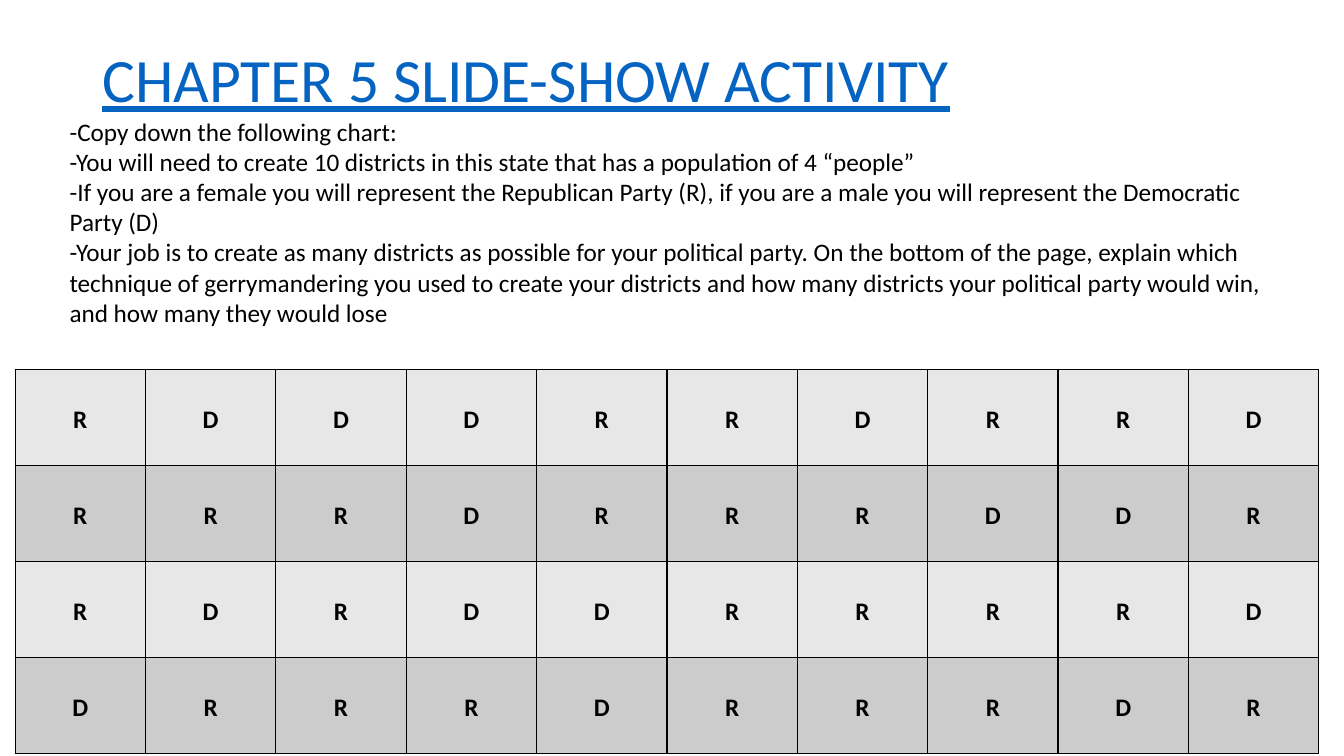
import pptx
import pptx.dml.color
import pptx.enum.text
import pptx.oxml
import pptx.oxml.ns
import pptx.util

RGBColor = pptx.dml.color.RGBColor
Align = pptx.enum.text.PP_ALIGN
Anchor = pptx.enum.text.MSO_ANCHOR

BLACK = RGBColor(0x00, 0x00, 0x00)
BLUE = RGBColor(0x05, 0x63, 0xC1)
LIGHT = RGBColor(0xE7, 0xE7, 0xE7)
DARK = RGBColor(0xCC, 0xCC, 0xCC)
FONT = "Calibri"

GRID_COLS, GRID_ROWS = 160, 90
UNIT = pptx.util.Inches(7.5) / GRID_ROWS

TITLE = "CHAPTER 5 SLIDE-SHOW ACTIVITY"
INSTRUCTIONS = [
    "-Copy down the following chart:",
    "-You will need to create 10 districts in this state that has a population of 4 “people”",
    "-If you are a female you will represent the Republican Party (R), if you are a male "
    "you will represent the Democratic Party (D)",
    "-Your job is to create as many districts as possible for your political party. On the "
    "bottom of the page, explain which technique of gerrymandering you used to create your "
    "districts and how many districts your political party would win, and how many they "
    "would lose",
]
VOTERS = ["RDDDRRDRRD", "RRRDRRRDDR", "RDRDDRRRRD", "DRRRDRRRDR"]


def grid(*cells):
    """Turn grid columns and rows into slide lengths."""
    return [round(n * UNIT) for n in cells]


def write(tf, lines, size=18, color=BLACK, bold=False, underline=False,
          align=Align.LEFT, spacing=1.0):
    """Write one formatted paragraph per line into a text frame."""
    tf.word_wrap = True
    for i, line in enumerate(lines):
        p = tf.paragraphs[0] if i == 0 else tf.add_paragraph()
        p.alignment = align
        p.line_spacing = spacing
        r = p.add_run()
        r.text = line
        r.font.name = FONT
        r.font.size = pptx.util.Pt(size)
        r.font.bold = bold
        r.font.underline = underline
        r.font.color.rgb = color


def add_text(slide, box, lines, anchor=Anchor.TOP, **style):
    """Place a text box in the given grid box."""
    tf = slide.shapes.add_textbox(*grid(*box)).text_frame
    tf.vertical_anchor = anchor
    write(tf, lines, **style)


def set_borders(cell):
    """Draw a thin black line on every side of a cell."""
    tcPr = cell._tc.get_or_add_tcPr()
    for i, side in enumerate(("lnL", "lnR", "lnT", "lnB")):
        tcPr.insert(i, pptx.oxml.parse_xml(
            f'<a:{side} {pptx.oxml.ns.nsdecls("a")} w="{pptx.util.Pt(1)}">'
            f'<a:solidFill><a:srgbClr val="{BLACK}"/></a:solidFill></a:{side}>'))


def add_voter_table(slide, box):
    """Fill the given grid box with the banded table of voters."""
    x, y, w, h = grid(*box)
    rows, cols = len(VOTERS), len(VOTERS[0])
    table = slide.shapes.add_table(rows, cols, x, y, w, h).table
    table.first_row = False
    table.horz_banding = False
    for column in table.columns:
        column.width = w // cols
    for i, voters in enumerate(VOTERS):
        table.rows[i].height = h // rows
        for j, voter in enumerate(voters):
            cell = table.cell(i, j)
            cell.fill.solid()
            cell.fill.fore_color.rgb = DARK if i % 2 else LIGHT
            cell.margin_top = pptx.util.Inches(0.35)
            write(cell.text_frame, [voter], bold=True, align=Align.CENTER)
            set_borders(cell)


def main():
    """Build and save the activity slide."""
    prs = pptx.Presentation()
    prs.slide_width, prs.slide_height = grid(GRID_COLS, GRID_ROWS)
    slide = prs.slides.add_slide(prs.slide_layouts[6])
    add_text(slide, (11, 4.8, 138, 10.1), [TITLE], anchor=Anchor.MIDDLE,
             size=44, color=BLUE, underline=True, spacing=0.9)
    add_voter_table(slide, (1.8, 43.95, 155.2, 45.8))
    add_text(slide, (7.1, 13.2, 144.4, 30.2), INSTRUCTIONS)
    prs.save("out.pptx")


if __name__ == "__main__":
    main()
